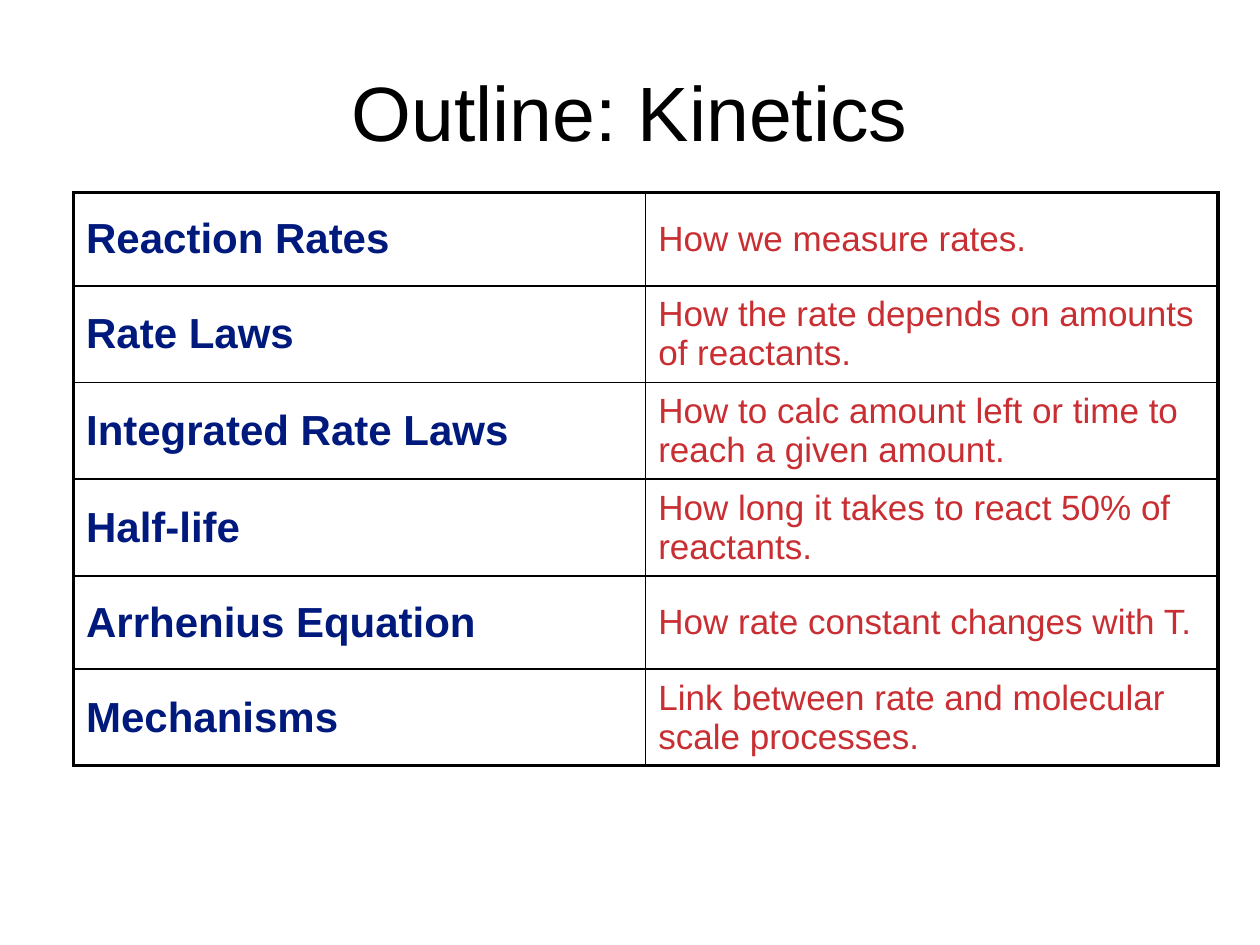
from lxml.etree import SubElement
from pptx import Presentation
from pptx.dml.color import RGBColor
from pptx.enum.text import MSO_ANCHOR as Anchor, PP_ALIGN as Align
from pptx.oxml.ns import qn
from pptx.util import Pt

COLORS = {"black": "000000", "topic": "00197D", "question": "C82E32"}
TOPICS = [
    ("Reaction Rates", "How we measure rates."),
    ("Rate Laws", "How the rate depends on amounts of reactants."),
    ("Integrated Rate Laws", "How to calc amount left or time to reach a given amount."),
    ("Half-life", "How long it takes to react 50% of reactants."),
    ("Arrhenius Equation", "How rate constant changes with T."),
    ("Mechanisms", "Link between rate and molecular scale processes."),
]
FORMATS = [
    {"name": "Arial", "size": Pt(24), "bold": True, "color": "topic"},
    {"name": "Arial", "size": Pt(20), "bold": False, "color": "question"},
]
TITLE_FORMAT = {"name": "Arial", "size": Pt(44), "bold": False, "color": "black"}
COLUMN_WIDTH, ROW_HEIGHT = 327, 53.3
OUTER, INNER = 2.25, 1


def write(frame, text, font_format):
    frame.text = text
    font = frame.paragraphs[0].runs[0].font
    for key, value in font_format.items():
        if key == "color":
            font.color.rgb = RGBColor.from_string(COLORS[value])
        else:
            setattr(font, key, value)


def add_border(cell, side, width):
    line = SubElement(cell._tc.get_or_add_tcPr(), qn(f"a:ln{side}"), w=str(Pt(width)))
    fill = SubElement(line, qn("a:solidFill"))
    SubElement(fill, qn("a:srgbClr"), val=COLORS["black"])


deck = Presentation()
deck.slide_width, deck.slide_height = Pt(720), Pt(540)
slide = deck.slides.add_slide(deck.slide_layouts[6])

title = slide.shapes.add_textbox(Pt(0), Pt(18), Pt(720), Pt(90)).text_frame
title.word_wrap = True
title.vertical_anchor = Anchor.MIDDLE
write(title, "Outline: Kinetics", TITLE_FORMAT)
title.paragraphs[0].alignment = Align.CENTER

outline = slide.shapes.add_table(
    len(TOPICS), 2, Pt(42), Pt(110), Pt(2 * COLUMN_WIDTH), Pt(len(TOPICS) * ROW_HEIGHT)
).table
outline.first_row = outline.horz_banding = False
for column in outline.columns:
    column.width = Pt(COLUMN_WIDTH)

last_row = len(TOPICS) - 1
for row, entry in enumerate(TOPICS):
    outline.rows[row].height = Pt(ROW_HEIGHT)
    for col, text in enumerate(entry):
        cell = outline.cell(row, col)
        cell.vertical_anchor = Anchor.MIDDLE
        write(cell.text_frame, text, FORMATS[col])
        on_edge = {"L": col == 0, "R": col == 1, "T": row == 0, "B": row == last_row}
        for side, is_outer in on_edge.items():
            add_border(cell, side, OUTER if is_outer else INNER)
        cell.fill.background()

deck.save("out.pptx")
